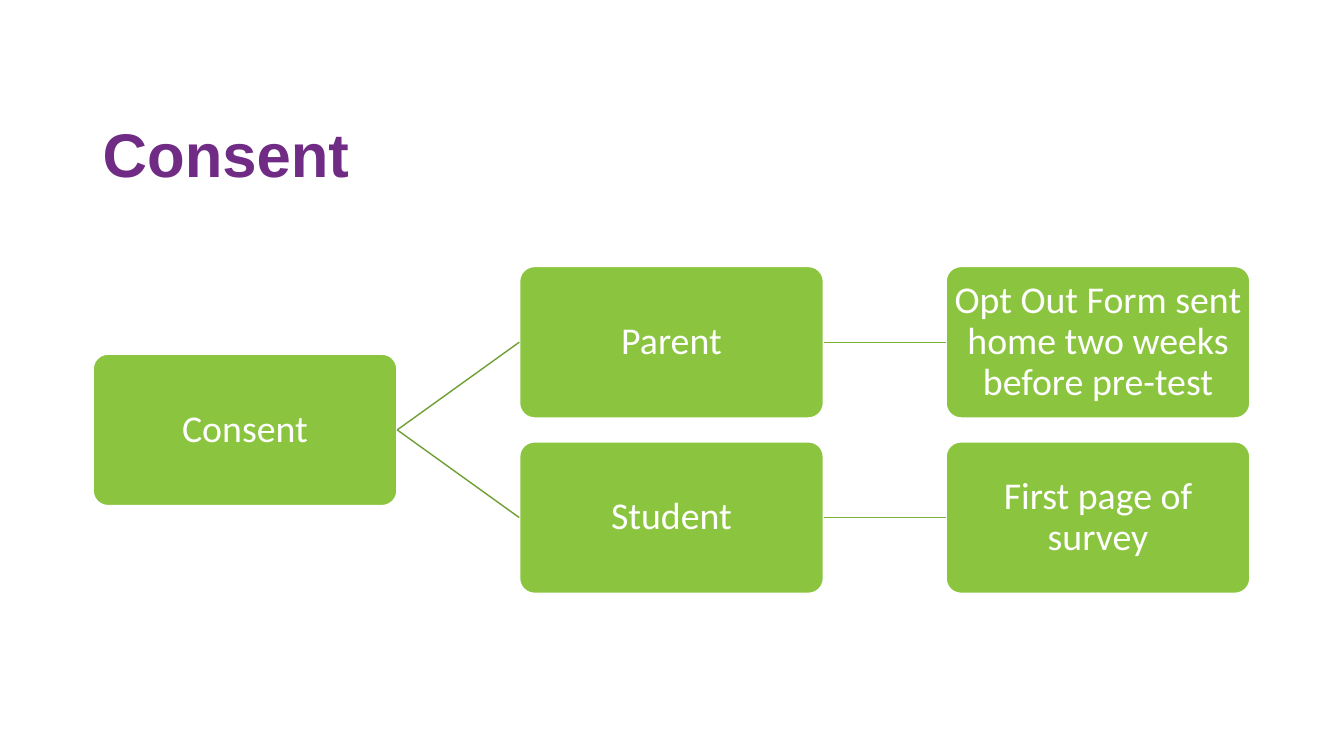
from dataclasses import dataclass

from lxml import etree
from pptx import Presentation
from pptx.dml.color import RGBColor
from pptx.enum.shapes import MSO_CONNECTOR, MSO_SHAPE
from pptx.enum.text import MSO_ANCHOR, PP_ALIGN
from pptx.oxml.ns import qn
from pptx.shapes.autoshape import Shape
from pptx.slide import Slide
from pptx.text.text import TextFrame
from pptx.util import Inches, Pt

ROUNDED = MSO_SHAPE.ROUNDED_RECTANGLE
STRAIGHT = MSO_CONNECTOR.STRAIGHT
MIDDLE = MSO_ANCHOR.MIDDLE
LEFT, CENTER = PP_ALIGN.LEFT, PP_ALIGN.CENTER
LEFT_SIDE, RIGHT_SIDE = 1, 3

PURPLE, GREEN, WHITE = "702B84", "8BC53F", "FFFFFF"
BRANCH_GREEN, DETAIL_GREEN = "6F9E32", "7EB339"

TREE_LEFT, TREE_TOP = 0.92, 2.64
COLUMN_STEP, HALF_ROW_STEP = 4.23, 0.87
BOX_WIDTH, BOX_HEIGHT = 3.02, 1.51


@dataclass(frozen=True)
class Box:
    name: str
    text: str
    column: int
    half_row: int


@dataclass(frozen=True)
class Link:
    source: str
    target: str
    color: str


BOXES = [
    Box("consent", "Consent", 0, 1),
    Box("parent", "Parent", 1, 0),
    Box("opt_out", "Opt Out Form sent home two weeks before pre-test", 2, 0),
    Box("student", "Student", 1, 2),
    Box("survey", "First page of survey", 2, 2),
]
LINKS = [
    Link("consent", "parent", BRANCH_GREEN),
    Link("parent", "opt_out", DETAIL_GREEN),
    Link("consent", "student", BRANCH_GREEN),
    Link("student", "survey", DETAIL_GREEN),
]


def rgb(color: str) -> RGBColor:
    return RGBColor.from_string(color)


def write_text(frame: TextFrame, text: str, font_name: str, size: float,
               color: str, alignment: PP_ALIGN, bold: bool = False) -> None:
    frame.text = text
    frame.word_wrap = True
    frame.vertical_anchor = MIDDLE
    paragraph = frame.paragraphs[0]
    paragraph.alignment = alignment
    paragraph.line_spacing = 0.9
    font = paragraph.runs[0].font
    font.name = font_name
    font.size = Pt(size)
    font.bold = bold
    font.color.rgb = rgb(color)


def add_title(slide: Slide, text: str) -> None:
    title = slide.shapes.add_textbox(Inches(0.92), Inches(0.84), Inches(11.5), Inches(1.45))
    write_text(title.text_frame, text, "Arial", 44, PURPLE, LEFT, bold=True)


def add_box(slide: Slide, box: Box) -> Shape:
    shape = slide.shapes.add_shape(
        ROUNDED,
        Inches(TREE_LEFT + box.column * COLUMN_STEP),
        Inches(TREE_TOP + box.half_row * HALF_ROW_STEP),
        Inches(BOX_WIDTH),
        Inches(BOX_HEIGHT),
    )
    shape.adjustments[0] = 0.1
    shape.shadow.inherit = False
    shape.fill.solid()
    shape.fill.fore_color.rgb = rgb(GREEN)
    shape.line.color.rgb = rgb(WHITE)
    shape.line.width = Pt(1.5)
    frame = shape.text_frame
    frame.margin_left = frame.margin_right = Inches(0.02)
    frame.margin_top = frame.margin_bottom = Inches(0.02)
    write_text(frame, box.text, "Calibri", 27, WHITE, CENTER)
    return shape


def add_link(slide: Slide, source: Shape, target: Shape, color: str) -> None:
    connector = slide.shapes.add_connector(STRAIGHT, 0, 0, 0, 0)
    connector.begin_connect(source, RIGHT_SIDE)
    connector.end_connect(target, LEFT_SIDE)
    connector.line.color.rgb = rgb(color)
    connector.line.width = Pt(1)
    etree.SubElement(connector._element.spPr, qn("a:effectLst"))


def main() -> None:
    presentation = Presentation()
    presentation.slide_width = Inches(13.33)
    presentation.slide_height = Inches(7.5)
    slide = presentation.slides.add_slide(presentation.slide_layouts[6])
    add_title(slide, "Consent")
    shapes = {box.name: add_box(slide, box) for box in BOXES}
    for link in LINKS:
        add_link(slide, shapes[link.source], shapes[link.target], link.color)
    presentation.save("out.pptx")


if __name__ == "__main__":
    main()
